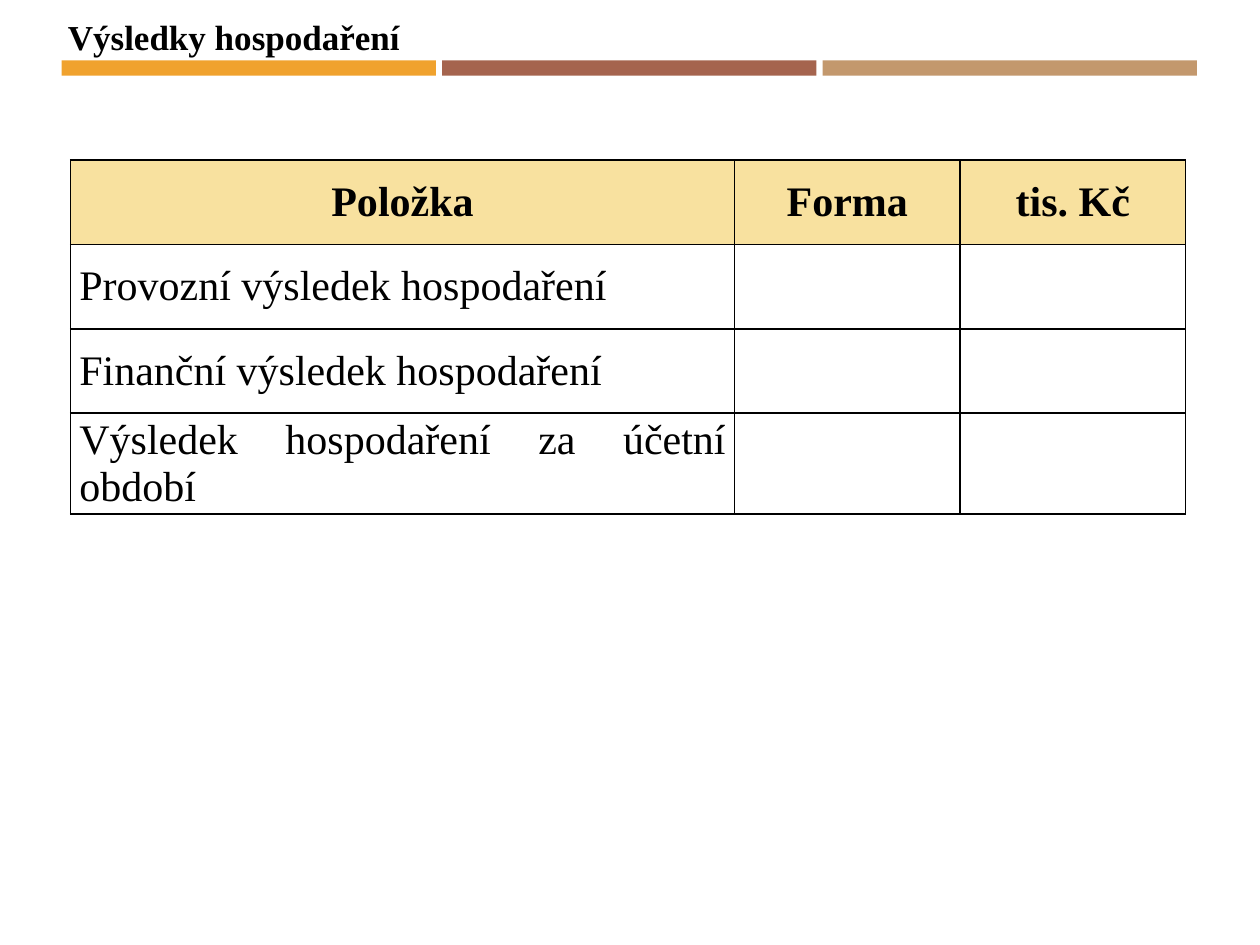
from dataclasses import dataclass

from lxml import etree
from pptx import Presentation
from pptx.dml.color import RGBColor
from pptx.enum import shapes, text
from pptx.oxml import ns
from pptx.util import Inches, Pt

COLORS = {
    "orange": "F0A22E",
    "brown": "A5644E",
    "tan": "C3986D",
    "header": "F8E19F",
    "black": "000000",
}
FONT = "Times New Roman"
BAR_LEFT, BAR_TOP, BAR_WIDTH, BAR_HEIGHT, BAR_STEP = 0.49, 0.48, 2.97, 0.12, 3.02
COLUMN_WIDTHS = (5.27, 1.79, 1.79)
ROW_HEIGHT = 0.67


@dataclass(frozen=True)
class Row:
    labels: tuple[str, ...]
    header: bool = False


ROWS = (
    Row(("Položka", "Forma", "tis. Kč"), header=True),
    Row(("Provozní výsledek hospodaření", "", "")),
    Row(("Finanční výsledek hospodaření", "", "")),
    Row(("Výsledek hospodaření za účetní období", "", "")),
)


def rgb(name: str) -> RGBColor:
    return RGBColor.from_string(COLORS[name])


def style_paragraph(paragraph, size: float, bold: bool) -> None:
    font = paragraph.font
    font.name, font.size, font.bold = FONT, Pt(size), bold
    font.color.rgb = rgb("black")


def draw_bar(page, index: int, color: str) -> None:
    bar = page.shapes.add_shape(
        shapes.MSO_SHAPE.RECTANGLE,
        Inches(BAR_LEFT + index * BAR_STEP), Inches(BAR_TOP),
        Inches(BAR_WIDTH), Inches(BAR_HEIGHT),
    )
    bar.shadow.inherit = False
    bar.fill.solid()
    bar.fill.fore_color.rgb = rgb(color)
    bar.line.fill.background()


def draw_title(page, title: str) -> None:
    box = page.shapes.add_textbox(Inches(0.44), Inches(0.07), Inches(2.86), Inches(0.44))
    frame = box.text_frame
    frame.word_wrap = False
    frame.auto_size = text.MSO_AUTO_SIZE.SHAPE_TO_FIT_TEXT
    frame.text = title
    style_paragraph(frame.paragraphs[0], 20, True)


def add_borders(cell) -> None:
    properties = cell._tc.get_or_add_tcPr()
    for side in ("lnL", "lnR", "lnT", "lnB"):
        line = etree.SubElement(properties, ns.qn(f"a:{side}"), w=str(Pt(1)))
        fill = etree.SubElement(line, ns.qn("a:solidFill"))
        etree.SubElement(fill, ns.qn("a:srgbClr"), val=COLORS["black"])


def fill_cell(cell, label: str, header: bool) -> None:
    add_borders(cell)
    if header:
        cell.fill.solid()
        cell.fill.fore_color.rgb = rgb("header")
    else:
        cell.fill.background()
    cell.vertical_anchor = text.MSO_ANCHOR.MIDDLE
    cell.margin_left = cell.margin_right = Inches(0.07)
    cell.margin_top = cell.margin_bottom = 0
    cell.text = label
    paragraph = cell.text_frame.paragraphs[0]
    paragraph.alignment = text.PP_ALIGN.CENTER if header else text.PP_ALIGN.JUSTIFY
    style_paragraph(paragraph, 24, header)


def draw_table(page, rows: tuple[Row, ...]) -> None:
    table = page.shapes.add_table(
        len(rows), len(COLUMN_WIDTHS), Inches(0.56), Inches(1.27),
        Inches(sum(COLUMN_WIDTHS)), Inches(ROW_HEIGHT * len(rows)),
    ).table
    table.first_row = table.horz_banding = False
    for column, width in zip(table.columns, COLUMN_WIDTHS):
        column.width = Inches(width)
    for table_row, row in zip(table.rows, rows):
        table_row.height = Inches(ROW_HEIGHT)
        for cell, label in zip(table_row.cells, row.labels):
            fill_cell(cell, label, row.header)


def main() -> None:
    deck = Presentation()
    deck.slide_width, deck.slide_height = Inches(10), Inches(7.5)
    page = deck.slides.add_slide(deck.slide_layouts[6])
    for index, color in enumerate(("orange", "brown", "tan")):
        draw_bar(page, index, color)
    draw_title(page, "Výsledky hospodaření")
    draw_table(page, ROWS)
    deck.save("out.pptx")


if __name__ == "__main__":
    main()
